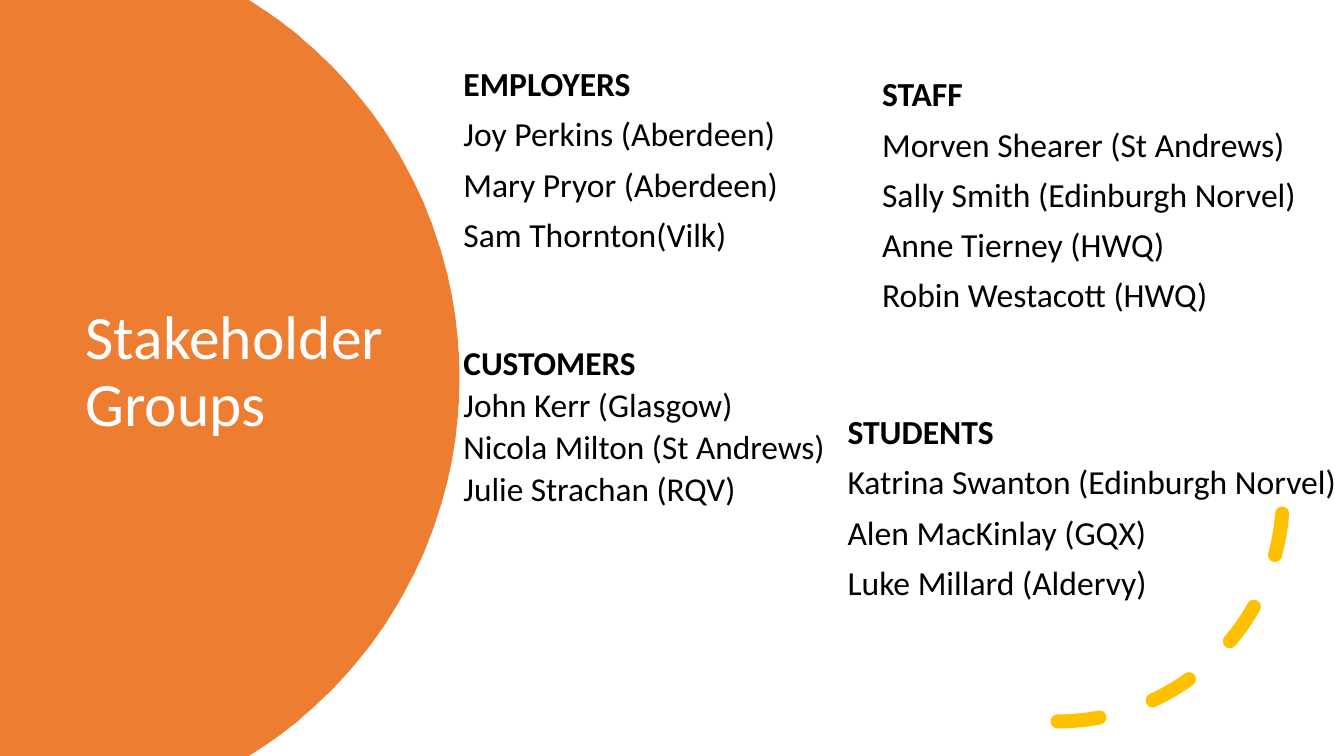
from math import asin, cos, sin

from lxml.etree import SubElement
from pptx import Presentation
from pptx.dml.color import RGBColor
from pptx.enum.dml import MSO_LINE
from pptx.enum.shapes import MSO_SHAPE
from pptx.enum.text import MSO_ANCHOR
from pptx.oxml.ns import qn
from pptx.util import Cm, Pt

FONT = "Calibri"
WIDTH, HEIGHT = 33.87, 19.05
ORANGE, YELLOW, WHITE, BLACK = "ED7D31", "FFC000", "FFFFFF", "000000"

# Each group: left, top, width, height, top margin (cm), size (pt), line spacing, lines
GROUPS = [
    (21.98, 1.27, 13, 8.43, 0.69, 24, 0.9,
     ["STAFF", "Morven Shearer (St Andrews)", "Sally Smith (Edinburgh Norvel)",
      "Anne Tierney (HWQ)", "Robin Westacott (HWQ)"]),
    (11.43, 8.76, 10.19, 4.37, 0.13, 23.8, 0.7,
     ["CUSTOMERS", "John Kerr (Glasgow)", "Nicola Milton (St Andrews)",
      "Julie Strachan (RQV)"]),
    (11.43, 1.57, 14.81, 6.07, 0.13, 24, 0.9,
     ["EMPLOYERS", "Joy Perkins (Aberdeen)", "Mary Pryor (Aberdeen)",
      "Sam Thornton(Vilk)"]),
    (21.11, 10.34, 14.81, 6.07, 0.13, 24, 0.9,
     ["STUDENTS", "Katrina Swanton (Edinburgh Norvel)", "Alen MacKinlay (GQX)",
      "Luke Millard (Aldervy)"]),
]


def colour(value):
    return RGBColor.from_string(value)


def set_format(target, values):
    for name, value in values.items():
        setattr(target, name, value)


def add_text(page, left, top, width, height, lines, ink,
             frame_format, para_format, font_format):
    """Add a text box with one paragraph per line; return its paragraphs."""
    box = page.shapes.add_textbox(Cm(left), Cm(top), Cm(width), Cm(height))
    frame = box.text_frame
    set_format(frame, {"word_wrap": True, **frame_format})
    frame.text = "\n".join(lines)
    for para in frame.paragraphs:
        set_format(para, para_format)
        for span in para.runs:
            set_format(span.font, {"name": FONT, **font_format})
            span.font.color.rgb = colour(ink)
    return frame.paragraphs


def add_title_panel(page, left, top, height):
    """Draw the circle segment cut off by the page edges, and the title on it."""
    centre_x, centre_y, radius = left + 0.38, top + height / 2, 11.2
    limit, steps = asin(height / 2 / radius), 120
    angles = [limit * (2 * step / steps - 1) for step in range(steps + 1)]
    curve = [(100 * (centre_x + radius * cos(angle)),
              100 * (centre_y + radius * sin(angle))) for angle in angles]
    builder = page.shapes.build_freeform(100 * left, 100 * top, scale=Cm(0.01))
    builder.add_line_segments(curve + [(100 * left, 100 * (top + height))], close=True)
    panel = builder.convert_to_shape()
    panel.shadow.inherit = False
    panel.fill.solid()
    panel.fill.fore_color.rgb = colour(ORANGE)
    panel.line.fill.background()
    add_text(page, left + 1.91, top + 3.2, 8.89, 12.4, ["Stakeholder Groups"], WHITE,
             {"vertical_anchor": MSO_ANCHOR.MIDDLE}, {"line_spacing": 0.9},
             {"size": Pt(44)})


def add_dashed_arc(page, left, top, side):
    arc = page.shapes.add_shape(MSO_SHAPE.ARC, Cm(left), Cm(top), Cm(side), Cm(side))
    arc.shadow.inherit = False
    arc.fill.background()
    arc.line.color.rgb = colour(YELLOW)
    set_format(arc.line, {"width": Pt(10), "dash_style": MSO_LINE.DASH})
    arc.element.spPr.find(qn("a:xfrm")).set("flipV", "1")
    outline = arc.element.spPr.find(qn("a:ln"))
    outline.set("cap", "rnd")
    SubElement(outline, qn("a:round"))


def add_group(page, left, top, width, height, margin, size, spacing, lines):
    """Add a stakeholder list under its bold heading."""
    paras = add_text(page, left, top, width, height, lines, BLACK,
                     {"margin_top": Cm(margin), "vertical_anchor": MSO_ANCHOR.TOP},
                     {"line_spacing": spacing, "space_before": Pt(10)},
                     {"size": Pt(size)})
    paras[0].runs[0].font.bold = True


def main():
    deck = Presentation()
    set_format(deck, {"slide_width": Cm(WIDTH), "slide_height": Cm(HEIGHT)})
    page = deck.slides.add_slide(deck.slide_layouts[6])
    add_title_panel(page, 0, 0, HEIGHT)
    add_dashed_arc(page, 20.98, 6.83, 11.35)
    for group in GROUPS:
        add_group(page, *group)
    deck.save("out.pptx")


if __name__ == "__main__":
    main()
